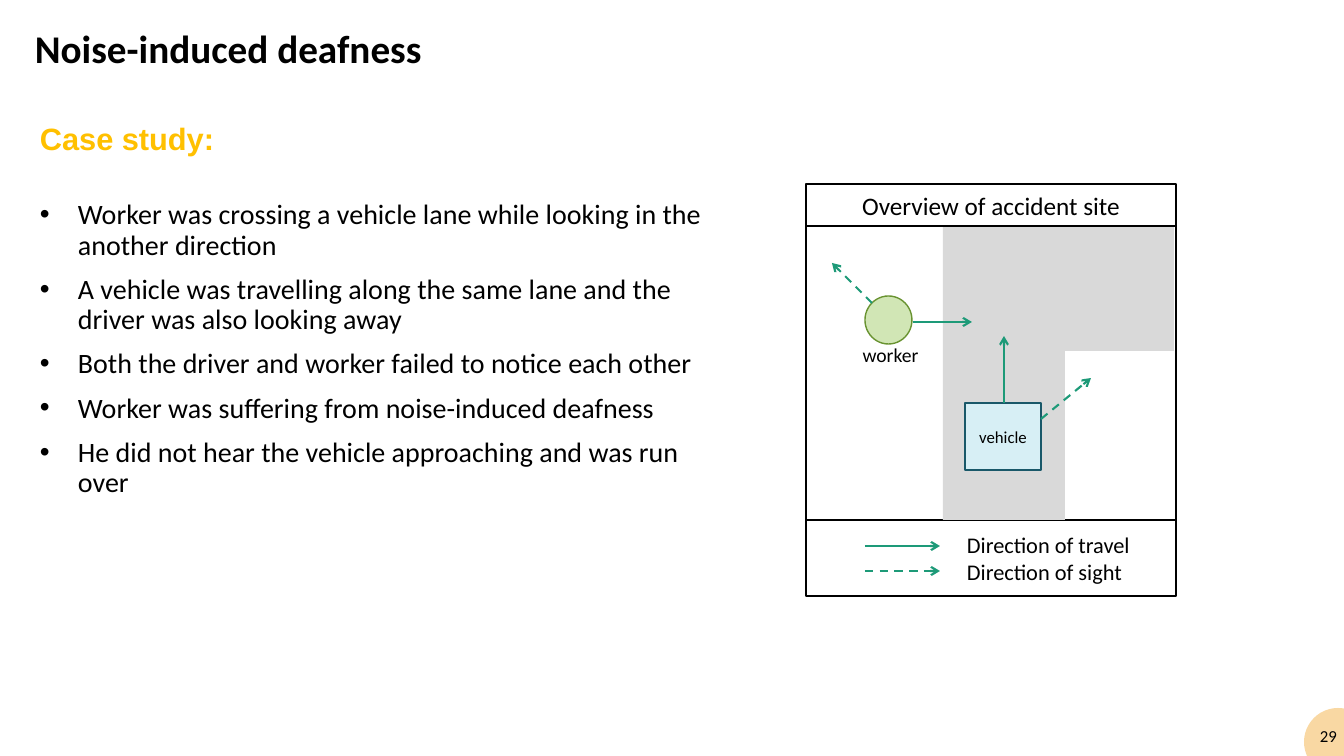
from lxml.etree import SubElement
from pptx import Presentation
from pptx.dml.color import RGBColor
from pptx.enum.dml import MSO_LINE
from pptx.enum.shapes import MSO_CONNECTOR, MSO_SHAPE
from pptx.enum.text import MSO_ANCHOR, PP_ALIGN
from pptx.oxml.ns import qn
from pptx.util import Pt

EMU_PER_PX = 914400 / 100.8
COLOURS = {
    "text": "000000", "heading": "FFC000", "arrow": "1D9A78", "lane": "D9D9D9",
    "vehicle": "D7EFF5", "vehicle_edge": "195869",
    "worker": "D1E6B5", "worker_edge": "699331", "badge": "F9D8A3",
}


def px(length):
    return round(length * EMU_PER_PX)


def colour(name):
    return RGBColor.from_string(COLOURS[name])


class SlideBuilder:
    font = "Calibri"

    def __init__(self, slide):
        self.slide = slide

    def style_runs(self, paragraph, size, bold=False, color="text", font=None):
        for run in paragraph.runs:
            run.font.name = font or self.font
            run.font.size = Pt(size)
            run.font.bold = bold
            run.font.color.rgb = colour(color)

    def fill_text(self, text_frame, text, size, bold=False, align=PP_ALIGN.LEFT, indent=0):
        text_frame.text = text
        for paragraph in text_frame.paragraphs:
            paragraph.alignment = align
            if indent:
                paragraph._p.get_or_add_pPr().set("marL", str(px(indent)))
            self.style_runs(paragraph, size, bold)

    def label(self, box, text, size, bold=False, align=PP_ALIGN.LEFT,
              anchor=MSO_ANCHOR.TOP, wrap=False):
        text_frame = self.slide.shapes.add_textbox(*map(px, box)).text_frame
        text_frame.word_wrap = wrap
        text_frame.vertical_anchor = anchor
        self.fill_text(text_frame, text, size, bold, align)

    def bullet_list(self, box, heading, items):
        text_frame = self.slide.shapes.add_textbox(*map(px, box)).text_frame
        text_frame.word_wrap = True
        text_frame.text = "\n".join([heading, *items])
        for index, paragraph in enumerate(text_frame.paragraphs):
            paragraph.line_spacing = 0.9
            paragraph.space_before = Pt(31 if index == 1 else 10)
            if index == 0:
                self.style_runs(paragraph, 22, True, "heading", "Arial")
                continue
            self.style_runs(paragraph, 20)
            properties = paragraph._p.get_or_add_pPr()
            properties.set("marL", str(px(38)))
            properties.set("indent", str(px(-38)))
            SubElement(properties, qn("a:buFont"), typeface="Arial")
            SubElement(properties, qn("a:buChar"), char="•")

    def shape(self, kind, box, fill=None, line=None, text=None, size=12,
              align=PP_ALIGN.CENTER, indent=0):
        shape = self.slide.shapes.add_shape(kind, *map(px, box))
        shape.shadow.inherit = False
        if fill:
            shape.fill.solid()
            shape.fill.fore_color.rgb = colour(fill)
        else:
            shape.fill.background()
        if line:
            shape.line.color.rgb = colour(line)
            shape.line.width = Pt(1)
        else:
            shape.line.fill.background()
        if text:
            shape.text_frame.vertical_anchor = MSO_ANCHOR.MIDDLE
            self.fill_text(shape.text_frame, text, size, align=align, indent=indent)

    def arrow(self, start, end, dashed=False):
        connector = self.slide.shapes.add_connector(
            MSO_CONNECTOR.STRAIGHT, *map(px, (*start, *end)))
        connector.line.color.rgb = colour("arrow")
        connector.line.width = Pt(1.5)
        if dashed:
            connector.line.dash_style = MSO_LINE.DASH
        properties = connector._element.spPr
        SubElement(properties.find(qn("a:ln")), qn("a:tailEnd"), type="arrow")
        SubElement(properties, qn("a:effectLst"))


def main():
    presentation = Presentation()
    presentation.slide_width, presentation.slide_height = px(1344), px(756)
    slide = presentation.slides.add_slide(presentation.slide_layouts[6])
    builder = SlideBuilder(slide)
    rectangle, ellipse = MSO_SHAPE.RECTANGLE, MSO_SHAPE.OVAL

    # Title and case study
    builder.label((25, 19, 411, 57), "Noise-induced deafness", 28, bold=True)
    builder.bullet_list((30, 119, 683, 595), "Case study:", [
        "Worker was crossing a vehicle lane while looking in the another direction",
        "A vehicle was travelling along the same lane and the driver was also looking away",
        "Both the driver and worker failed to notice each other",
        "Worker was suffering from noise-induced deafness",
        "He did not hear the vehicle approaching and was run over",
    ])

    # Site frame and legend
    left, width = 806, 370
    builder.shape(rectangle, (left, 226, width, 294), line="text")
    builder.shape(rectangle, (left, 520, width, 76), line="text",
                  text="Direction of travel\nDirection of sight", size=16,
                  align=PP_ALIGN.LEFT, indent=151)
    for y, dashed in ((546, False), (571, True)):
        builder.arrow((865, y), (940, y), dashed)

    # Vehicle lanes
    builder.shape(rectangle, (943, 227, 231, 124), fill="lane")
    builder.shape(rectangle, (943, 351, 122, 169), fill="lane")

    # Vehicle with travel and sight
    builder.shape(rectangle, (965, 403, 76, 67), "vehicle", "vehicle_edge", "vehicle")
    builder.arrow((1004, 403), (1004, 336))
    builder.arrow((1041, 419), (1091, 378), dashed=True)

    # Worker with travel and sight
    builder.shape(ellipse, (865, 296, 47, 48), "worker", "worker_edge")
    builder.arrow((913, 322), (972, 322))
    builder.arrow((872, 303), (832, 263), dashed=True)
    builder.label((840, 342, 101, 25), "worker", 14, align=PP_ALIGN.CENTER,
                  anchor=MSO_ANCHOR.MIDDLE, wrap=True)

    # Site heading
    builder.shape(rectangle, (left, 184, width, 42), line="text",
                  text="Overview of accident site", size=18)

    # Page number
    builder.shape(ellipse, (1304, 708, 68, 68), fill="badge")
    builder.label((1310, 721, 37, 30), "29", 12)

    presentation.save("out.pptx")


if __name__ == "__main__":
    main()
